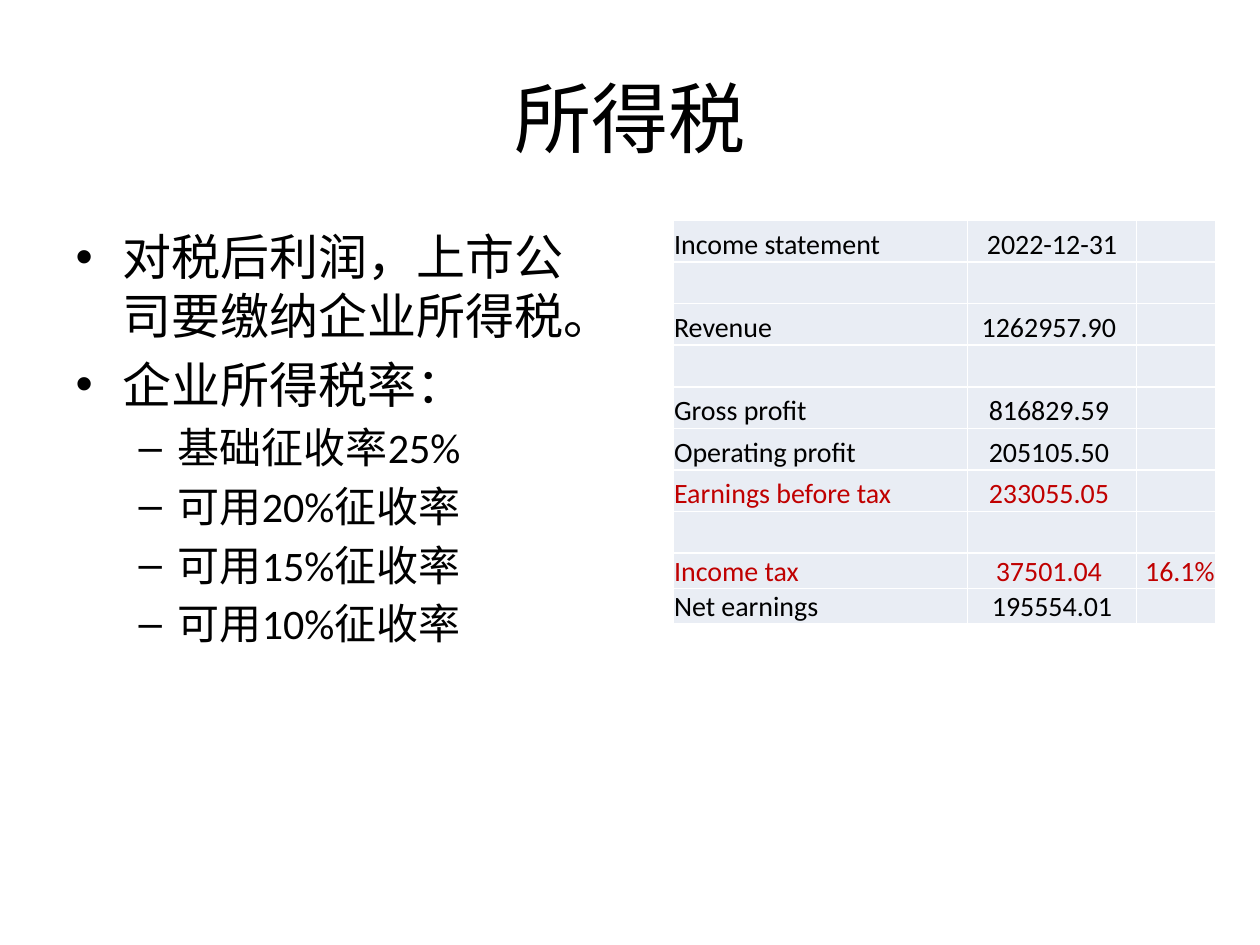
from dataclasses import dataclass

from lxml.etree import SubElement
from pptx import Presentation
from pptx.dml.color import RGBColor as RGB
from pptx.enum.text import MSO_ANCHOR as Anchor, PP_ALIGN as Align
from pptx.oxml.ns import qn
from pptx.util import Inches, Pt


@dataclass(frozen=True)
class Theme:
    font: str = "Calibri"
    title: int = 44
    levels: tuple = (28, 24)
    cell: int = 16
    ink: str = "000000"
    accent: str = "C00000"
    fill: str = "E9EDF4"


POINTS = [
    (0, "对税后利润，上市公司要缴纳企业所得税。"),
    (0, "企业所得税率："),
    (1, "基础征收率25%"),
    (1, "可用20%征收率"),
    (1, "可用15%征收率"),
    (1, "可用10%征收率"),
]
ROWS = [
    ("Income statement", "2022-12-31", ""),
    ("", "", ""),
    ("Revenue", "1262957.90 ", ""),
    ("", "", ""),
    ("Gross profit", "816829.59 ", ""),
    ("Operating profit", "205105.50 ", ""),
    ("Earnings before tax", "233055.05 ", ""),
    ("", "", ""),
    ("Income tax", "37501.04 ", "16.1%"),
    ("Net earnings", "195554.01", ""),
]
MARKED = {"Earnings before tax", "Income tax"}
WIDTHS = [2.34, 1.34, 0.63]
HEIGHTS = [0.33] * 8 + [0.28] * 2
ALIGNS = [Align.LEFT, Align.CENTER, Align.RIGHT]


def apply(item, values):
    for name, value in values.items():
        setattr(item, name, value)


class Builder:
    def __init__(self, slide, theme):
        self.slide = slide
        self.theme = theme

    def label(self, para, text, size, color=None):
        run = para.add_run()
        run.text = text
        apply(run.font, {"name": self.theme.font, "size": Pt(size)})
        run.font.color.rgb = RGB.from_string(color or self.theme.ink)

    def place(self, shape, left, top, width, height):
        apply(shape, {"left": Inches(left), "top": Inches(top),
                      "width": Inches(width), "height": Inches(height)})

    def title(self, text, *box):
        shape = self.slide.shapes.title
        self.place(shape, *box)
        para = shape.text_frame.paragraphs[0]
        para.alignment = Align.CENTER
        self.label(para, text, self.theme.title)

    def points(self, items, *box):
        shape = self.slide.placeholders[1]
        self.place(shape, *box)
        frame = shape.text_frame
        for i, (level, text) in enumerate(items):
            para = frame.add_paragraph() if i else frame.paragraphs[0]
            para.level = level
            self.label(para, text, self.theme.levels[level])
        frame.paragraphs[0].space_before = Pt(0)

    def cell(self, cell, text, align, color):
        inset = Inches(0.01)
        apply(cell, {"margin_left": inset, "margin_right": inset,
                     "margin_top": inset, "margin_bottom": 0,
                     "vertical_anchor": Anchor.BOTTOM})
        cell.fill.solid()
        cell.fill.fore_color.rgb = RGB.from_string(self.theme.fill)
        para = cell.text_frame.paragraphs[0]
        para.alignment = align
        if text:
            self.label(para, text, self.theme.cell, color)
        else:  # keeps an empty cell from stretching its row
            SubElement(para._p, qn("a:endParaRPr"),
                       sz=str(self.theme.cell * 100))

    def table(self, rows, left, top):
        size = [Inches(n) for n in (left, top, sum(WIDTHS), sum(HEIGHTS))]
        table = self.slide.shapes.add_table(
            len(rows), len(WIDTHS), *size).table
        apply(table, {"first_row": False, "horz_banding": False})
        for col, width in zip(table.columns, WIDTHS):
            col.width = Inches(width)
        for row, height, texts in zip(table.rows, HEIGHTS, rows):
            row.height = Inches(height)
            color = self.theme.accent if texts[0] in MARKED else self.theme.ink
            for cell, text, align in zip(row.cells, texts, ALIGNS):
                self.cell(cell, text, align, color)


def main():
    deck = Presentation()
    apply(deck, {"slide_width": Inches(10), "slide_height": Inches(7.5)})
    slide = deck.slides.add_slide(deck.slide_layouts[1])
    page = Builder(slide, Theme())
    page.title("所得税", 0.5, 0.3, 9, 1.25)
    page.points(POINTS, 0.5, 1.75, 4.42, 4.95)
    page.table(ROWS, 5.34, 1.75)
    deck.save("out.pptx")


if __name__ == "__main__":
    main()
